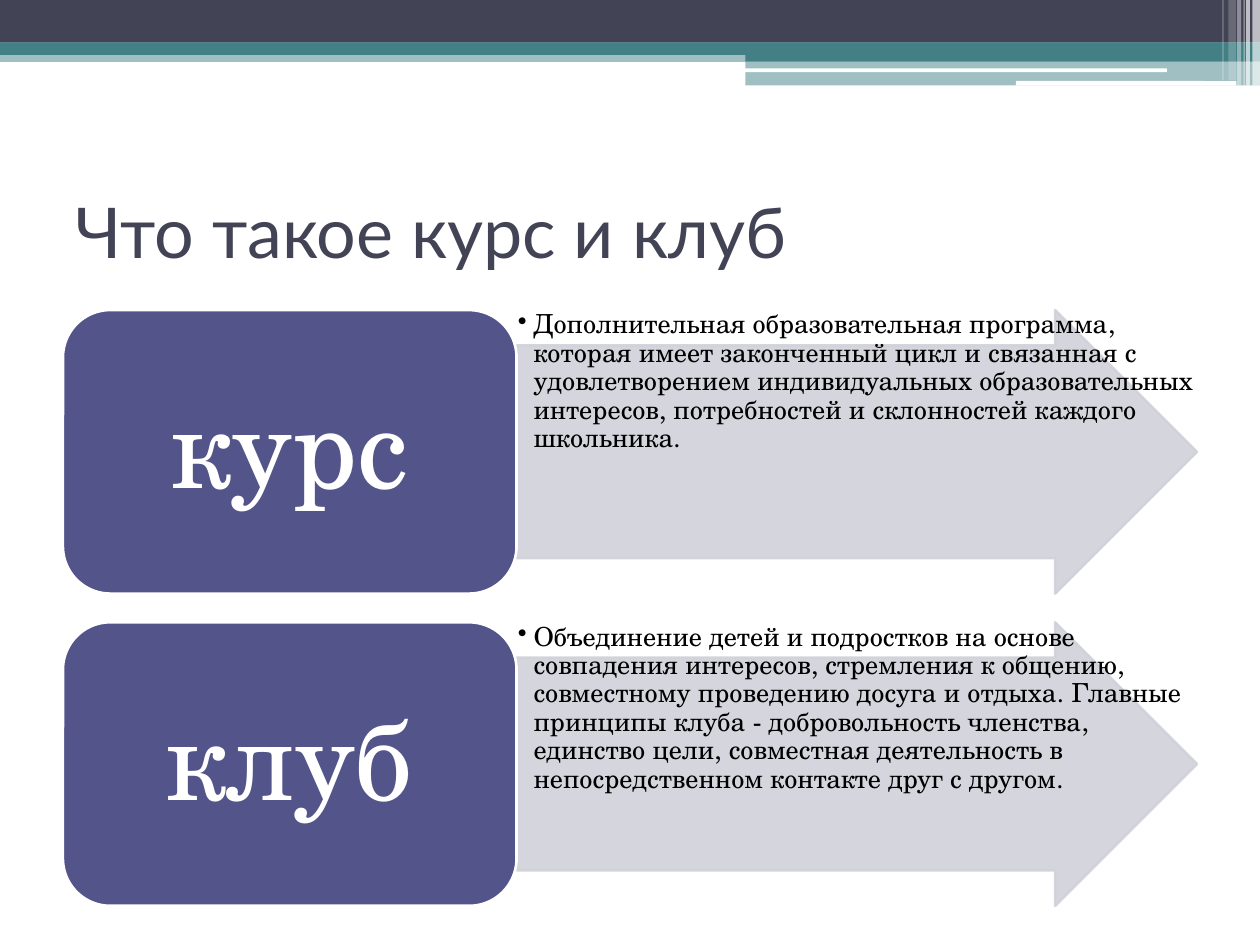
from dataclasses import dataclass

from lxml import etree
from pptx import Presentation
from pptx.dml.color import RGBColor
from pptx.enum.shapes import MSO_SHAPE
from pptx.enum.text import MSO_ANCHOR, PP_ALIGN
from pptx.oxml.ns import qn
from pptx.util import Pt

RECTANGLE = MSO_SHAPE.RECTANGLE
ROUNDED = MSO_SHAPE.ROUNDED_RECTANGLE
ARROW = MSO_SHAPE.RIGHT_ARROW
MIDDLE = MSO_ANCHOR.MIDDLE
TOP = MSO_ANCHOR.TOP
CENTER = PP_ALIGN.CENTER


@dataclass(frozen=True)
class Theme:
    dark: str = "424456"
    teal: str = "438086"
    white: str = "FFFFFF"
    black: str = "000000"
    label_fill: str = "53548A"
    arrow_fill: str = "D1D1DA"
    title_font: str = "Lato"
    body_font: str = "TeX Gyre Schola"
    title_size: float = 40
    label_size: float = 65
    body_size: float = 15


THEME = Theme()

TITLE = "Что такое курс и клуб"
TERMS = [
    ("курс", "Дополнительная образовательная программа, которая имеет законченный "
             "цикл и связанная с удовлетворением индивидуальных образовательных "
             "интересов, потребностей и склонностей каждого школьника."),
    ("клуб", "Объединение детей и подростков на основе совпадения интересов, "
             "стремления к общению, совместному проведению досуга и отдыха. Главные "
             "принципы клуба - добровольность членства, единство цели, совместная "
             "деятельность в непосредственном контакте друг с другом."),
]

# Header bands: kind, (left, top, width, height), colour, opacity in percent
BANDS = [
    (RECTANGLE, (0, 28.8, 720, 6.6), THEME.teal, 50),
    (RECTANGLE, (0, 0, 720, 24.4), THEME.dark, 100),
    (RECTANGLE, (0, 24.2, 720, 7.2), THEME.teal, 100),
    (RECTANGLE, (426, 28, 294, 7), THEME.teal, 100),
    (RECTANGLE, (426, 34.6, 294, 14.2), THEME.teal, 50),
    (ROUNDED, (425.6, 39.1, 241.2, 2.2), THEME.white, 100),
    (ROUNDED, (580.5, 46.3, 126, 2.7), THEME.white, 100),
]
# Stripes at the right end of the header: left, width, height, opacity
STRIPES = [
    (715.6, 4.4, 49, 65),
    (712.1, 2.2, 49, 65),
    (710.6, 0.7, 49, 60),
    (707, 2.2, 49, 40),
    (702, 4.3, 46, 20),
    (698.5, 0.7, 46, 30),
]

LEFT, ROW_TOP = 36, 177.2
LABEL_WIDTH, ARROW_WIDTH = 259.2, 388.8
ROW_HEIGHT, ROW_STEP = 162, 178.4


def set_opacity(color_format, percent):
    color = color_format._xFill.find(qn("a:srgbClr"))
    etree.SubElement(color, qn("a:alpha"), val=str(percent * 1000))


def add_shape(slide, kind, box, color, opacity=100, line_color=None):
    shape = slide.shapes.add_shape(kind, *map(Pt, box))
    shape.shadow.inherit = False
    paints = [shape.fill]
    shape.fill.solid()
    shape.fill.fore_color.rgb = RGBColor.from_string(color)
    if line_color:
        shape.line.width = Pt(1.5)
        shape.line.fill.solid()
        shape.line.color.rgb = RGBColor.from_string(line_color)
        paints.append(shape.line.fill)
    else:
        shape.line.fill.background()
    if opacity < 100:
        for paint in paints:
            set_opacity(paint.fore_color, opacity)
    return shape


def write(shape, text, font, size, color, anchor, insets):
    """Fill the shape with one paragraph; insets are horizontal and vertical."""
    frame = shape.text_frame
    frame.word_wrap = True
    frame.vertical_anchor = anchor
    frame.margin_left = frame.margin_right = Pt(insets[0])
    frame.margin_top = frame.margin_bottom = Pt(insets[1])
    paragraph = frame.paragraphs[0]
    paragraph.text = text
    paragraph.font.name = font
    paragraph.font.size = Pt(size)
    paragraph.font.color.rgb = RGBColor.from_string(color)
    return paragraph


def add_bullet(paragraph, indent):
    properties = paragraph._p.get_or_add_pPr()
    properties.set("marL", str(Pt(indent)))
    properties.set("indent", str(Pt(-indent)))
    bullet = etree.Element(qn("a:buChar"), char="•")
    properties.find(qn("a:defRPr")).addprevious(bullet)


def add_term(slide, top, label, description):
    arrow_box = (LEFT + LABEL_WIDTH, top, ARROW_WIDTH, ROW_HEIGHT)
    arrow = add_shape(slide, ARROW, arrow_box, THEME.arrow_fill, 90, THEME.arrow_fill)
    arrow.adjustments[0] = 0.75
    arrow.adjustments[1] = 0.5

    text_box = slide.shapes.add_textbox(*map(Pt, arrow_box))
    paragraph = write(text_box, description, THEME.body_font, THEME.body_size,
                      THEME.black, TOP, (0.7, 0.7))
    paragraph.line_spacing = 0.9
    add_bullet(paragraph, 9)

    label_box = (LEFT, top, LABEL_WIDTH, ROW_HEIGHT)
    label_shape = add_shape(slide, ROUNDED, label_box, THEME.label_fill,
                            line_color=THEME.white)
    paragraph = write(label_shape, label, THEME.body_font, THEME.label_size,
                      THEME.white, MIDDLE, (11.5, 2))
    paragraph.alignment = CENTER
    paragraph.line_spacing = 0.9


def main():
    presentation = Presentation()
    presentation.slide_width, presentation.slide_height = Pt(720), Pt(540)
    slide = presentation.slides.add_slide(presentation.slide_layouts[6])

    for kind, box, color, opacity in BANDS:
        add_shape(slide, kind, box, color, opacity)
    for left, width, height, opacity in STRIPES:
        add_shape(slide, RECTANGLE, (left, 0, width, height), THEME.white, opacity)

    title = slide.shapes.add_textbox(Pt(LEFT), Pt(90), Pt(648), Pt(84))
    write(title, TITLE, THEME.title_font, THEME.title_size, THEME.dark, MIDDLE, (7.2, 3.6))

    for row, (label, description) in enumerate(TERMS):
        add_term(slide, ROW_TOP + row * ROW_STEP, label, description)

    presentation.save("out.pptx")


if __name__ == "__main__":
    main()
